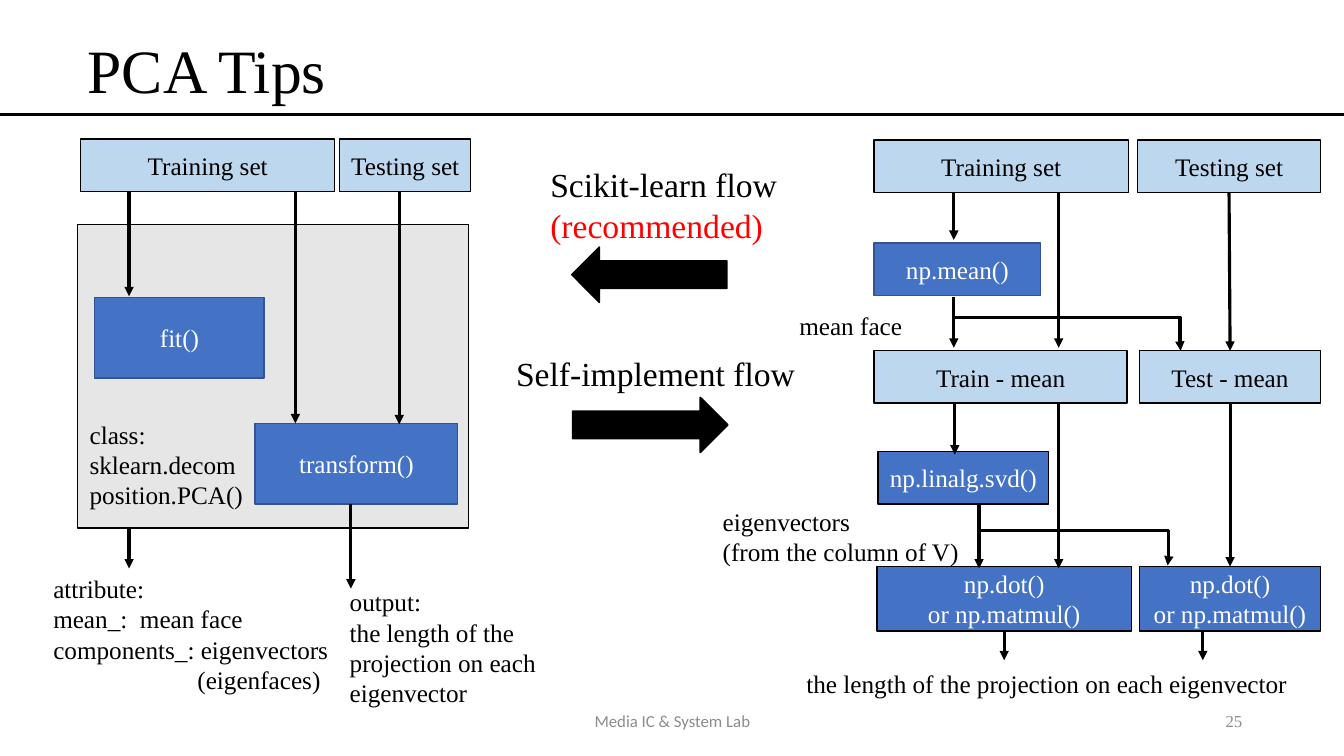
from lxml.etree import SubElement
from pptx import Presentation
from pptx.dml.color import RGBColor
from pptx.enum.shapes import MSO_CONNECTOR as Link, MSO_SHAPE as Shape
from pptx.enum.text import MSO_ANCHOR as Anchor, MSO_AUTO_SIZE as AutoSize, PP_ALIGN as Align
from pptx.oxml.ns import qn
from pptx.util import Inches, Pt

BLACK = RGBColor(0x00, 0x00, 0x00)
WHITE = RGBColor(0xFF, 0xFF, 0xFF)
RED = RGBColor(0xFF, 0x00, 0x00)
GRAY = RGBColor(0x8C, 0x8C, 0x8C)
PANEL = RGBColor(0xE7, 0xE6, 0xE6)
PALE = RGBColor(0xBD, 0xD7, 0xEE)
BLUE = RGBColor(0x44, 0x72, 0xC4)
NAVY = RGBColor(0x32, 0x54, 0x91)
SERIF = "Times New Roman"
TOP, BOTTOM = 0, 2

# Styles: fill, outline, text colour
DATA = (PALE, BLACK, BLACK)
STEP = (BLUE, NAVY, WHITE)
DARK_STEP = (BLUE, BLACK, WHITE)
BACKDROP = (PANEL, BLACK, BLACK)
SOLID = (BLACK, BLACK, WHITE)

# name: lines, (left, top, width, height), style
BOXES = {
    "class panel": ([], (0.77, 2.23, 3.88, 3.01), BACKDROP),
    "library train": (["Training set"], (0.8, 1.38, 2.52, 0.52), DATA),
    "library test": (["Testing set"], (3.37, 1.38, 1.3, 0.52), DATA),
    "fit": (["fit()"], (0.94, 2.95, 1.68, 0.8), STEP),
    "transform": (["transform()"], (2.53, 4.2, 2.01, 0.8), STEP),
    "own train": (["Training set"], (8.67, 1.39, 2.52, 0.52), DATA),
    "own test": (["Testing set"], (11.28, 1.39, 1.82, 0.52), DATA),
    "mean": (["np.mean()"], (8.67, 2.41, 1.65, 0.52), STEP),
    "train minus mean": (["Train - mean"], (8.67, 3.48, 2.51, 0.52), DATA),
    "test minus mean": (["Test - mean"], (11.3, 3.48, 1.8, 0.52), DATA),
    "svd": (["np.linalg.svd()"], (8.71, 4.48, 1.69, 0.52), DARK_STEP),
    "train dot": (["np.dot()", "or np.matmul()"], (8.7, 5.62, 2.52, 0.64), DARK_STEP),
    "test dot": (["np.dot()", "or np.matmul()"], (11.3, 5.62, 1.8, 0.64), DARK_STEP),
}
BLOCK_ARROWS = [
    (Shape.LEFT_ARROW, (5.67, 2.45, 1.54, 0.55)),
    (Shape.RIGHT_ARROW, (5.68, 3.94, 1.54, 0.55)),
]
# x, top, bottom, box joined at the start, box joined at the end
DOWN_ARROWS = [
    (1.28, 1.9, 2.94, None, None),
    (2.93, 1.9, 4.2, None, None),
    (3.96, 1.9, 4.21, None, None),
    (1.28, 5.23, 5.64, None, None),
    (3.48, 5.0, 5.84, None, None),
    (9.46, 1.91, 2.38, None, None),
    (9.46, 2.95, 3.45, None, None),
    (10.5, 1.91, 3.45, None, None),
    (9.47, 4.0, 4.51, None, None),
    (10.5, 4.0, 5.64, None, None),
    (9.71, 5.0, 5.64, None, None),
    (9.96, 6.26, 6.55, "train dot", None),
    (11.93, 6.26, 6.55, None, None),
    (12.2, 1.91, 3.48, "own test", "test minus mean"),
    (12.2, 4.0, 5.62, "test minus mean", "test dot"),
]
# start x, start y, end x, end y, bend in thousandths of a percent
BRANCHES = [
    (9.47, 3.15, 11.71, 3.48, 99700),
    (9.69, 5.26, 11.58, 5.61, 100600),
]
# lines, (left, top, width, height), size, wrap
LABELS = [
    (["class:", "sklearn.decomposition.PCA()"], (0.79, 4.11, 1.72, 1.31), 18, True),
    (["attribute:", "mean_:  mean face", "components_: eigenvectors", "(eigenfaces)"],
     (0.43, 5.64, 3.05, 1.62), 18, True),
    (["output:", "the length of the projection on each eigenvector"],
     (3.37, 5.77, 2.49, 1.31), 18, True),
    (["the length of the projection on each eigenvector"], (7.9, 6.58, 5.2, 0.4), 18, True),
    (["eigenvectors", "(from the column of V)"], (7.07, 4.97, 2.7, 0.71), 18, True),
    (["mean face"], (7.83, 3.03, 1.27, 0.4), 18, False),
    (["Scikit-learn flow", "(recommended)"], (5.36, 1.58, 2.47, 1.31), 24, False),
    (["Self-implement flow"], (5.02, 3.45, 2.99, 0.5), 24, False),
]
LINE_COLORS = {"(recommended)": RED}
LINE_INDENTS = {"(eigenfaces)": 1.43}
# text, (left, top, width, height), alignment, font
FOOTERS = [
    ("Media IC & System Lab", (4.42, 6.95, 4.5, 0.4), Align.CENTER, "Calibri"),
    ("25", (9.42, 6.95, 3, 0.4), Align.RIGHT, SERIF),
]


def inches(values):
    return [Inches(value) for value in values]


def write(frame, lines, size, color, align=Align.LEFT, font=SERIF):
    frame.text = "\n".join(lines)
    for para in frame.paragraphs:
        para.alignment = align
        if para.text in LINE_INDENTS:
            para._p.get_or_add_pPr().set("marL", str(Inches(LINE_INDENTS[para.text])))
        for span in para.runs:
            span.font.name = font
            span.font.size = Pt(size)
            span.font.color.rgb = LINE_COLORS.get(span.text, color)


def add_block(page, kind, place, style):
    fill, outline, _ = style
    block = page.shapes.add_shape(kind, *inches(place))
    block.shadow.inherit = False
    block.fill.solid()
    block.fill.fore_color.rgb = fill
    block.line.color.rgb = outline
    block.line.width = Pt(1)
    return block


def add_label(page, lines, place, size, wrap=True, color=BLACK, **look):
    label = page.shapes.add_textbox(*inches(place))
    label.text_frame.word_wrap = wrap
    write(label.text_frame, lines, size, color, **look)
    return label


def add_line(page, kind, ends, arrow=True):
    line = page.shapes.add_connector(kind, *inches(ends))
    line.line.color.rgb = BLACK
    line.line.width = Pt(2.25)
    if arrow:
        SubElement(line.line._get_or_add_ln(), qn("a:tailEnd"), type="triangle")
    SubElement(line._element.spPr, qn("a:effectLst"))
    return line


def main():
    deck = Presentation()
    deck.slide_width, deck.slide_height = Inches(13.33), Inches(7.5)
    page = deck.slides.add_slide(deck.slide_layouts[5])

    title = page.shapes.title
    title.left, title.top, title.width, title.height = inches((0.77, 0, 11.5, 1.45))
    write(title.text_frame, ["PCA Tips"], 44, BLACK)
    title.text_frame.auto_size = AutoSize.NONE
    title.text_frame.vertical_anchor = Anchor.MIDDLE
    title.text_frame.paragraphs[0].line_spacing = 0.9
    add_line(page, Link.STRAIGHT, (0, 1.14, 13.33, 1.14), arrow=False)

    boxes = {}
    for name, (lines, place, style) in BOXES.items():
        box = boxes[name] = add_block(page, Shape.RECTANGLE, place, style)
        if lines:
            box.text_frame.word_wrap = True
            box.text_frame.vertical_anchor = Anchor.MIDDLE
            write(box.text_frame, lines, 18, style[2], Align.CENTER)
    for kind, place in BLOCK_ARROWS:
        add_block(page, kind, place, SOLID)

    for x, top, bottom, source, target in DOWN_ARROWS:
        arrow = add_line(page, Link.STRAIGHT, (x, top, x, bottom))
        if source:
            arrow.begin_connect(boxes[source], BOTTOM)
        if target:
            arrow.end_connect(boxes[target], TOP)
    for *ends, bend in BRANCHES:
        branch = add_line(page, Link.ELBOW, ends)
        guides = branch._element.spPr.find(qn("a:prstGeom")).find(qn("a:avLst"))
        SubElement(guides, qn("a:gd"), name="adj1", fmla=f"val {bend}")

    for lines, place, size, wrap in LABELS:
        add_label(page, lines, place, size, wrap)
    for text, place, align, font in FOOTERS:
        footer = add_label(page, [text], place, 12, color=GRAY, align=align, font=font)
        footer.text_frame.vertical_anchor = Anchor.MIDDLE

    deck.save("out.pptx")


if __name__ == "__main__":
    main()
